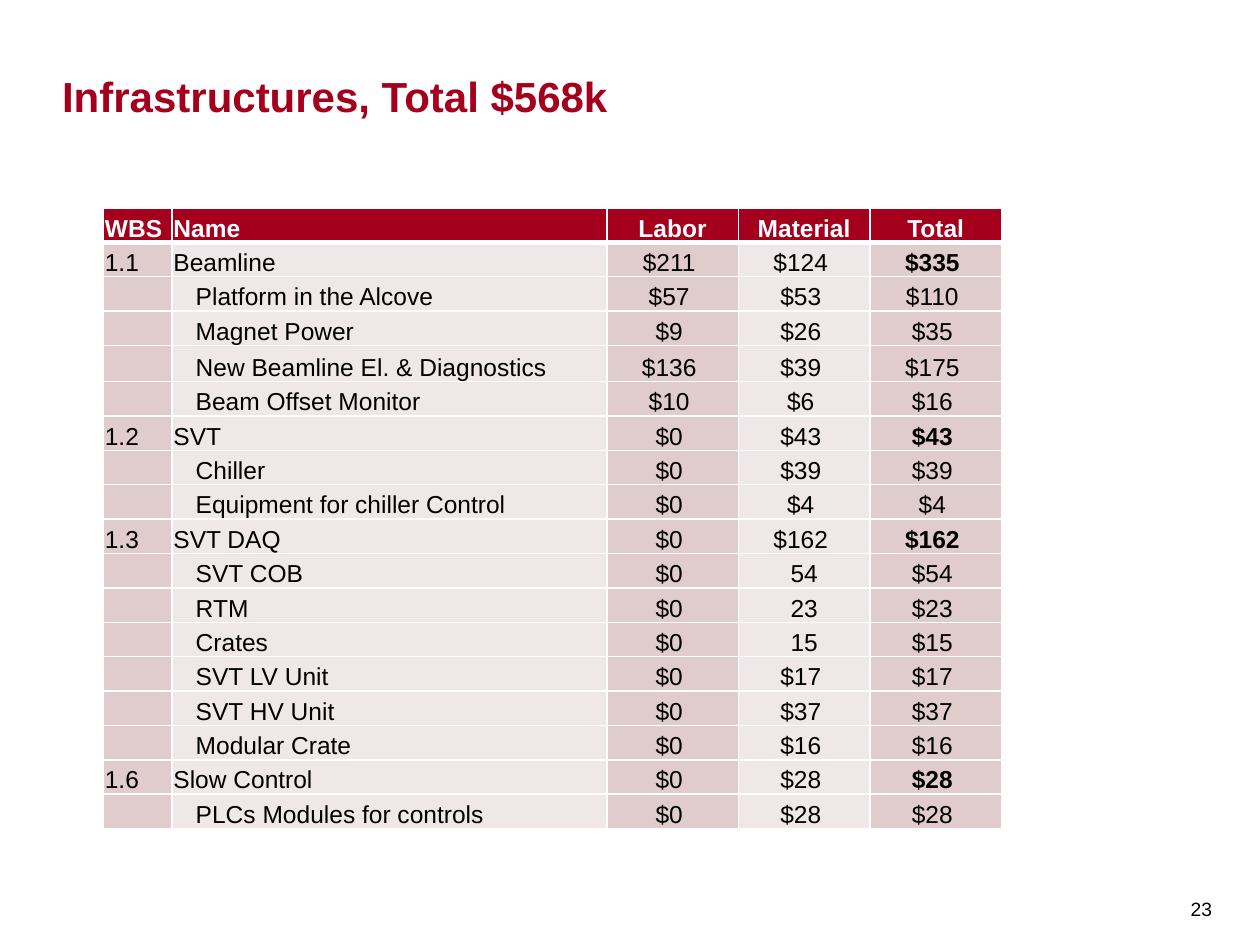
from lxml.etree import SubElement as Sub
from pptx import Presentation
from pptx.dml.color import RGBColor as Rgb
from pptx.enum.text import MSO_ANCHOR as Anchor, PP_ALIGN as Align
from pptx.oxml.ns import qn
from pptx.util import Pt

# Content
TITLE = "Infrastructures, Total $568k"
PAGE = "23"
HEAD = ("WBS", "Name", "Labor", "Material", "Total")
ITEMS = [
    ("1.1", "Beamline", "$211 ", "$124 ", "$335 "),
    ("", "Platform in the Alcove", "$57 ", "$53 ", "$110 "),
    ("", "Magnet Power", "$9 ", "$26 ", "$35 "),
    ("", "New Beamline El. & Diagnostics", "$136 ", "$39 ", "$175 "),
    ("", "Beam Offset Monitor", "$10 ", "$6 ", "$16 "),
    ("1.2", "SVT", "$0 ", "$43 ", "$43 "),
    ("", "Chiller", "$0 ", "$39 ", "$39 "),
    ("", "Equipment for chiller Control", "$0 ", "$4 ", "$4 "),
    ("1.3", "SVT DAQ", "$0 ", "$162 ", "$162 "),
    ("", "SVT COB", "$0 ", "54", "$54 "),
    ("", "RTM", "$0 ", "23", "$23 "),
    ("", "Crates", "$0 ", "15", "$15 "),
    ("", "SVT LV Unit", "$0 ", "$17 ", "$17 "),
    ("", "SVT HV Unit", "$0 ", "$37 ", "$37 "),
    ("", "Modular Crate", "$0 ", "$16 ", "$16 "),
    ("1.6", "Slow Control", "$0 ", "$28 ", "$28 "),
    ("", "PLCs Modules for controls", "$0 ", "$28 ", "$28 "),
]
COLORS = {"red": "A4001D", "dark": "E0CCCD", "light": "F0E7E8",
          "white": "FFFFFF", "black": "000000"}

# Lengths in points
WIDTHS = (39.2, 248.4, 75.2, 75.2, 75.2)
ROW, TALL, TALL_ROW = 19.65, 20.7, 4
LEFT, TOP = 59.2, 118.8
INSET, INDENT = 0.75, 13.5
THIN, THICK = 1, 3


def paint(name):
    return Rgb.from_string(COLORS[name])


def apply(thing, values):
    for key, value in values.items():
        setattr(thing, key, value)


def write(para, text, size, color, bold=False, align=Align.LEFT):
    para.alignment = align
    run = para.add_run()
    run.text = text
    apply(run.font, {"name": "Arial", "size": Pt(size), "bold": bold})
    run.font.color.rgb = paint(color)


def edge(cell, tag, width):
    line = Sub(cell._tc.get_or_add_tcPr(), qn(tag), w=str(Pt(width)))
    fill = Sub(line, qn("a:solidFill"))
    Sub(fill, qn("a:srgbClr"), val=COLORS["white"])


def frame(shape, box, anchor, insets):
    apply(shape, dict(zip(("left", "top", "width", "height"), map(Pt, box))))
    sides = ("margin_left", "margin_top", "margin_right", "margin_bottom")
    apply(shape.text_frame, dict(zip(sides, map(Pt, insets))))
    apply(shape.text_frame, {"word_wrap": True, "vertical_anchor": anchor})
    return shape.text_frame.paragraphs[0]


def fill_cell(cell, text, r, c):
    head = r == 0
    group = not head and bool(ITEMS[r - 1][0])
    sub = not head and not group and c == 1
    apply(cell, {"margin_left": Pt(INDENT if sub else INSET),
                 "margin_right": Pt(INSET), "margin_top": Pt(INSET),
                 "margin_bottom": 0, "vertical_anchor": Anchor.BOTTOM})
    # Borders come before the fill
    for tag in ("a:lnL", "a:lnR"):
        edge(cell, tag, THIN)
    edge(cell, "a:lnT", THICK if r == 1 else THIN)
    edge(cell, "a:lnB", THICK if head else THIN)
    cell.fill.solid()
    cell.fill.fore_color.rgb = paint("red" if head else ("dark", "light")[c % 2])
    para = cell.text_frame.paragraphs[0]
    if text:
        write(para, text, 14, "white" if head else "black",
              head or (group and c == 4), Align.CENTER if c > 1 else Align.LEFT)
    else:
        # Small end mark keeps empty cells from growing the row
        Sub(para._p, qn("a:endParaRPr"), sz="1400")


def main():
    deck = Presentation()
    apply(deck, {"slide_width": Pt(720), "slide_height": Pt(540)})
    slide = deck.slides.add_slide(deck.slide_layouts[5])
    shapes = slide.shapes

    # Title and page number
    para = frame(shapes.title, (35.5, 10, 638, 59), Anchor.BOTTOM, (0, 0, 0, 0))
    write(para, TITLE, 24, "red", True)
    box = shapes.add_textbox(0, 0, 0, 0)
    para = frame(box, (674.6, 497.5, 25.2, 42.5), Anchor.MIDDLE, (5.8, 4.3, 5.8, 3.6))
    write(para, PAGE, 11, "black")

    # Cost table
    rows = [HEAD, *ITEMS]
    tall = ROW * len(ITEMS) + TALL
    table = shapes.add_table(len(rows), len(HEAD), Pt(LEFT), Pt(TOP),
                             Pt(sum(WIDTHS)), Pt(tall)).table
    table.horz_banding = False
    for col, width in zip(table.columns, WIDTHS):
        col.width = Pt(width)
    for r, row in enumerate(rows):
        table.rows[r].height = Pt(TALL if r == TALL_ROW else ROW)
        for c, text in enumerate(row):
            fill_cell(table.cell(r, c), text, r, c)

    deck.save("out.pptx")


if __name__ == "__main__":
    main()
